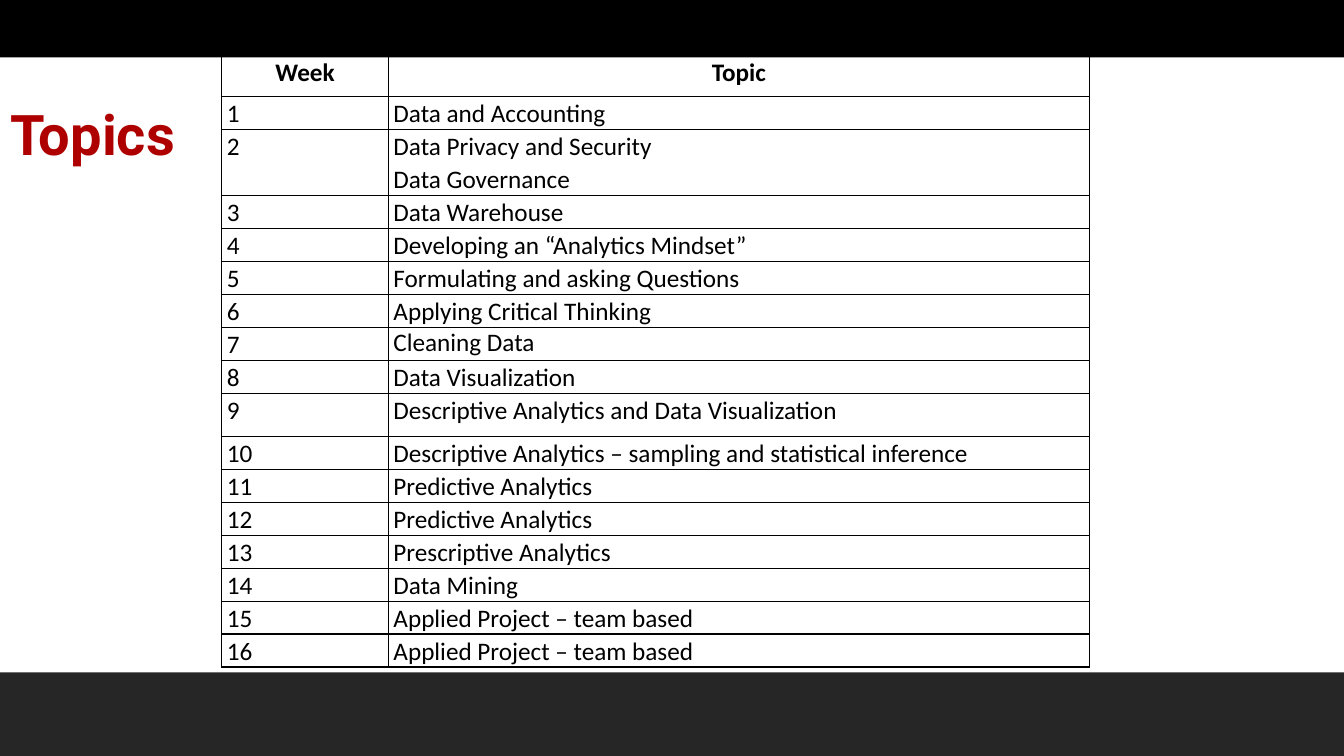
import dataclasses

import pptx
import pptx.dml.color
import pptx.enum.shapes
import pptx.enum.text
import pptx.oxml
import pptx.oxml.ns
import pptx.util

ALIGN = pptx.enum.text.PP_ALIGN
ANCHOR = pptx.enum.text.MSO_ANCHOR
BLACK = "000000"
ROW_HEIGHT = 4.13

presentation = pptx.Presentation()
presentation.slide_width = pptx.util.Inches(13.33)
presentation.slide_height = pptx.util.Inches(7.5)


@dataclasses.dataclass(frozen=True)
class Bar:
    top: float
    height: float
    color: str


@dataclasses.dataclass(frozen=True)
class Week:
    label: str
    topics: tuple[str, ...]
    height: float = ROW_HEIGHT
    topic_spacing: float = 1.07
    heading: bool = False


BARS = [Bar(88.93, 11.07, "262626"), Bar(0, 7.6, BLACK)]
COLUMN_WIDTHS = [12.4, 52.15]
WEEKS = [
    Week("Week", ("Topic",), height=5.47, heading=True),
    Week("1", ("Data and Accounting",)),
    Week("2", ("Data Privacy and Security", "Data Governance"), height=2 * ROW_HEIGHT),
    Week("3", ("Data Warehouse",)),
    Week("4", ("Developing an “Analytics Mindset”",)),
    Week("5", ("Formulating and asking Questions",)),
    Week("6", ("Applying Critical Thinking",)),
    Week("7", ("Cleaning Data",), topic_spacing=1.0),
    Week("8", ("Data Visualization",)),
    Week("9", ("Descriptive Analytics and Data Visualization",), height=5.73),
    Week("10", ("Descriptive Analytics – sampling and statistical inference",)),
    Week("11", ("Predictive Analytics",)),
    Week("12", ("Predictive Analytics",)),
    Week("13", ("Prescriptive Analytics",)),
    Week("14", ("Data Mining",)),
    Week("15", ("Applied Project – team based",)),
    Week("16", ("Applied Project – team based",)),
]


def across(percent: float) -> int:
    return round(presentation.slide_width * percent / 100)


def down(percent: float) -> int:
    return round(presentation.slide_height * percent / 100)


def rgb(color: str) -> pptx.dml.color.RGBColor:
    return pptx.dml.color.RGBColor.from_string(color)


def style_font(paragraph, name: str, size: float, color: str, bold: bool) -> None:
    paragraph.font.name = name
    paragraph.font.size = pptx.util.Pt(size)
    paragraph.font.bold = bold
    paragraph.font.color.rgb = rgb(color)


def draw_bar(slide, bar: Bar) -> None:
    shape = slide.shapes.add_shape(
        pptx.enum.shapes.MSO_SHAPE.RECTANGLE, 0, down(bar.top), across(100), down(bar.height)
    )
    shape.shadow.inherit = False
    shape.fill.solid()
    shape.fill.fore_color.rgb = rgb(bar.color)
    shape.line.fill.background()


def draw_borders(cell) -> None:
    properties = cell._tc.get_or_add_tcPr()
    for position, side in enumerate(("lnL", "lnR", "lnT", "lnB")):
        border = pptx.oxml.parse_xml(
            f'<a:{side} {pptx.oxml.ns.nsdecls("a")} w="{pptx.util.Pt(1)}">'
            f'<a:solidFill><a:srgbClr val="{BLACK}"/></a:solidFill></a:{side}>'
        )
        properties.insert(position, border)


def fill_cell(cell, lines: tuple[str, ...], spacing: float, heading: bool) -> None:
    cell.fill.background()
    draw_borders(cell)
    cell.margin_left = cell.margin_right = pptx.util.Inches(0.05)
    cell.margin_top = cell.margin_bottom = 0
    cell.text_frame.text = "\n".join(lines)
    for paragraph in cell.text_frame.paragraphs:
        paragraph.alignment = ALIGN.CENTER if heading else ALIGN.LEFT
        paragraph.line_spacing = spacing
        style_font(paragraph, "Calibri", 18, BLACK, heading)


def draw_schedule(slide, weeks: list[Week]) -> None:
    table = slide.shapes.add_table(
        len(weeks), len(COLUMN_WIDTHS), across(16.5), down(7.33),
        across(sum(COLUMN_WIDTHS)), down(sum(week.height for week in weeks)),
    ).table
    table.first_row = table.horz_banding = False
    for column, width in zip(table.columns, COLUMN_WIDTHS):
        column.width = across(width)
    for row, week in zip(table.rows, weeks):
        row.height = down(week.height)
        fill_cell(row.cells[0], (week.label,), 1.07, week.heading)
        fill_cell(row.cells[1], week.topics, week.topic_spacing, week.heading)


def place_title(slide, text: str) -> None:
    title = slide.shapes.title
    title.left, title.top = 0, down(10.27)
    title.width, title.height = across(15.9), down(12.4)
    title.text_frame.text = text
    title.text_frame.word_wrap = True
    title.text_frame.vertical_anchor = ANCHOR.BOTTOM
    paragraph = title.text_frame.paragraphs[0]
    paragraph.alignment = ALIGN.LEFT
    style_font(paragraph, "Roboto", 40, "AF0000", True)


def main() -> None:
    slide = presentation.slides.add_slide(presentation.slide_layouts[5])
    for bar in BARS:
        draw_bar(slide, bar)
    draw_schedule(slide, WEEKS)
    place_title(slide, "Topics")
    presentation.save("out.pptx")


if __name__ == "__main__":
    main()
